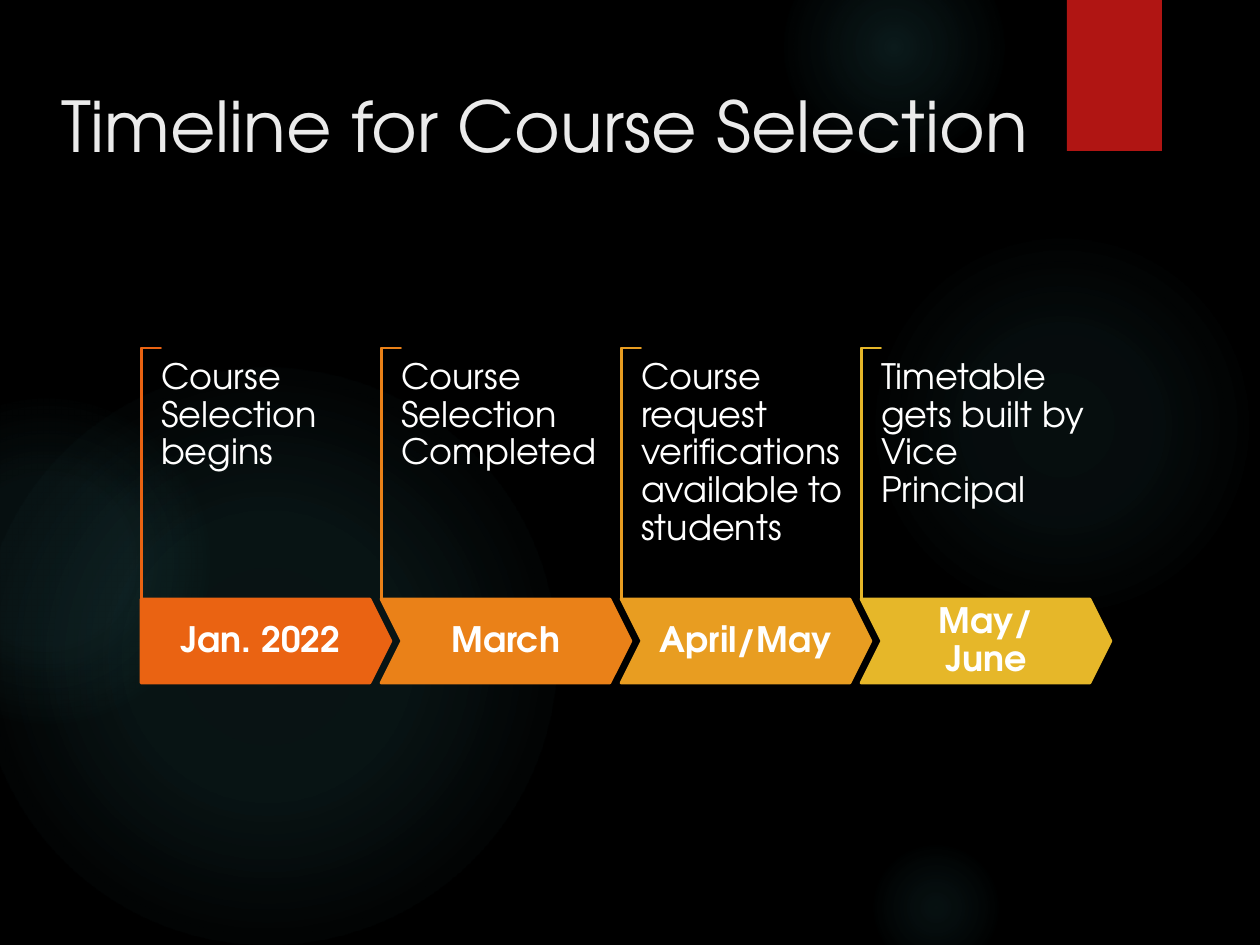
from dataclasses import dataclass

from lxml import etree
from pptx import Presentation
from pptx import util as u
from pptx.dml.color import RGBColor
from pptx.enum import shapes, text
from pptx.oxml import ns

SCALE = 914400 / 126
KIND = shapes.MSO_SHAPE


@dataclass(frozen=True)
class Theme:
    font: str = "TeX Gyre Adventor"
    back: str = "000000"
    glow: str = "50B9C1"
    tab: str = "B01513"
    head: str = "EBEBEB"
    body: str = "FFFFFF"
    big: int = 40
    small: int = 20
    line: float = 1.5


@dataclass(frozen=True)
class Box:
    x: int
    y: int
    w: int
    h: int

    def emu(self) -> list[u.Emu]:
        return [px(n) for n in (self.x, self.y, self.w, self.h)]


@dataclass(frozen=True)
class Glow:
    x: int
    y: int
    size: int
    stops: tuple


@dataclass(frozen=True)
class Step:
    label: str
    note: str
    color: str
    pad: int = 16


THEME = Theme()
GLOWS = [
    Glow(868, 231, 388, ((0, 7), (36, 6), (69, 0))),
    Glow(784, -63, 220, ((0, 14), (36, 7), (73, 0))),
    Glow(868, 840, 136, ((0, 9), (36, 5), (66, 0))),
    Glow(-21, 368, 577, ((0, 11), (36, 10), (75, 0))),
    Glow(-116, 399, 325, ((0, 8), (36, 8), (72, 0))),
]
STEPS = [
    Step("Jan. 2022", "Course Selection begins", "EA6312"),
    Step("March", "Course Selection Completed", "EA8118"),
    Step("April/May", "Course request verifications available to students",
         "E89D21", 12),
    Step("May/June", "Timetable gets built by Vice Principal", "E6B729", 24),
]
LEFT, PITCH = 141, 240


def px(n: int) -> u.Emu:
    return u.Emu(round(n * SCALE))


def rgb(code: str) -> RGBColor:
    return RGBColor.from_string(code)


def add_shape(slide, kind, box: Box, fill: str, line: str | None = None):
    shape = slide.shapes.add_shape(kind, *box.emu())
    shape.shadow.inherit = False
    shape.fill.solid()
    shape.fill.fore_color.rgb = rgb(fill)
    if line:
        shape.line.color.rgb = rgb(line)
        shape.line.width = u.Pt(THEME.line)
    else:
        shape.line.fill.background()
    return shape


def add_text(slide, box: Box, words: str, size: int, color: str,
             pad: tuple[int, int] = (0, 0), label: bool = False) -> None:
    frame = slide.shapes.add_textbox(*box.emu()).text_frame
    frame.word_wrap = True
    frame.margin_left = frame.margin_right = px(pad[0])
    frame.margin_top = frame.margin_bottom = px(pad[1])
    para = frame.paragraphs[0]
    para.text = words
    para.font.name = THEME.font
    para.font.size = u.Pt(size)
    para.font.color.rgb = rgb(color)
    para.font.bold = label
    if size == THEME.small:
        para.line_spacing = 0.9
    if label:
        frame.vertical_anchor = text.MSO_ANCHOR.MIDDLE
        para.alignment = text.PP_ALIGN.CENTER


def add_glow(slide, glow: Glow) -> None:
    box = Box(glow.x, glow.y, glow.size, glow.size)
    shape = add_shape(slide, KIND.OVAL, box, THEME.glow)
    grad = etree.Element(ns.qn("a:gradFill"), rotWithShape="1")
    stops = etree.SubElement(grad, ns.qn("a:gsLst"))
    for pos, alpha in glow.stops:
        stop = etree.SubElement(stops, ns.qn("a:gs"), pos=str(pos * 1000))
        color = etree.SubElement(stop, ns.qn("a:srgbClr"), val=THEME.glow)
        etree.SubElement(color, ns.qn("a:alpha"), val=str(alpha * 1000))
    ring = etree.SubElement(grad, ns.qn("a:path"), {"path": "circle"})
    etree.SubElement(ring, ns.qn("a:fillToRect"),
                     {side: "50000" for side in "ltrb"})
    props = shape.element.spPr
    props.replace(props.find(ns.qn("a:solidFill")), grad)


def add_step(slide, rank: int, step: Step) -> None:
    x = LEFT + rank * PITCH
    long, short = 252, 20
    post = Box(x + (short - long) // 2, 348 + (long - short) // 2, long, short)
    mark = add_shape(slide, KIND.CORNER, post, THEME.body, step.color)
    mark.rotation = 90
    mark.adjustments[0] = mark.adjustments[1] = 0.01

    kind = KIND.CHEVRON if rank else KIND.PENTAGON
    arrow = add_shape(slide, kind, Box(x, 599, 250, 84), step.color, step.color)
    arrow.adjustments[0] = 0.25

    area = Box(x + 21, 599, 208, 84) if rank else Box(x, 599, 239, 84)
    add_text(slide, area, step.label, THEME.small, THEME.body,
             (step.pad, 0), label=True)
    add_text(slide, Box(x + 20, 359, 206, 193), step.note,
             THEME.small, THEME.body)


def main() -> None:
    deck = Presentation()
    deck.slide_width, deck.slide_height = px(1260), px(945)
    slide = deck.slides.add_slide(deck.slide_layouts[6])
    slide.background.fill.solid()
    slide.background.fill.fore_color.rgb = rgb(THEME.back)
    for glow in GLOWS:
        add_glow(slide, glow)
    add_shape(slide, KIND.RECTANGLE, Box(1067, 0, 95, 151), THEME.tab)
    add_text(slide, Box(48, 77, 1017, 193), "Timeline for Course Selection",
             THEME.big, THEME.head, (13, 6))
    for rank, step in enumerate(STEPS):
        add_step(slide, rank, step)
    deck.save("out.pptx")


if __name__ == "__main__":
    main()
